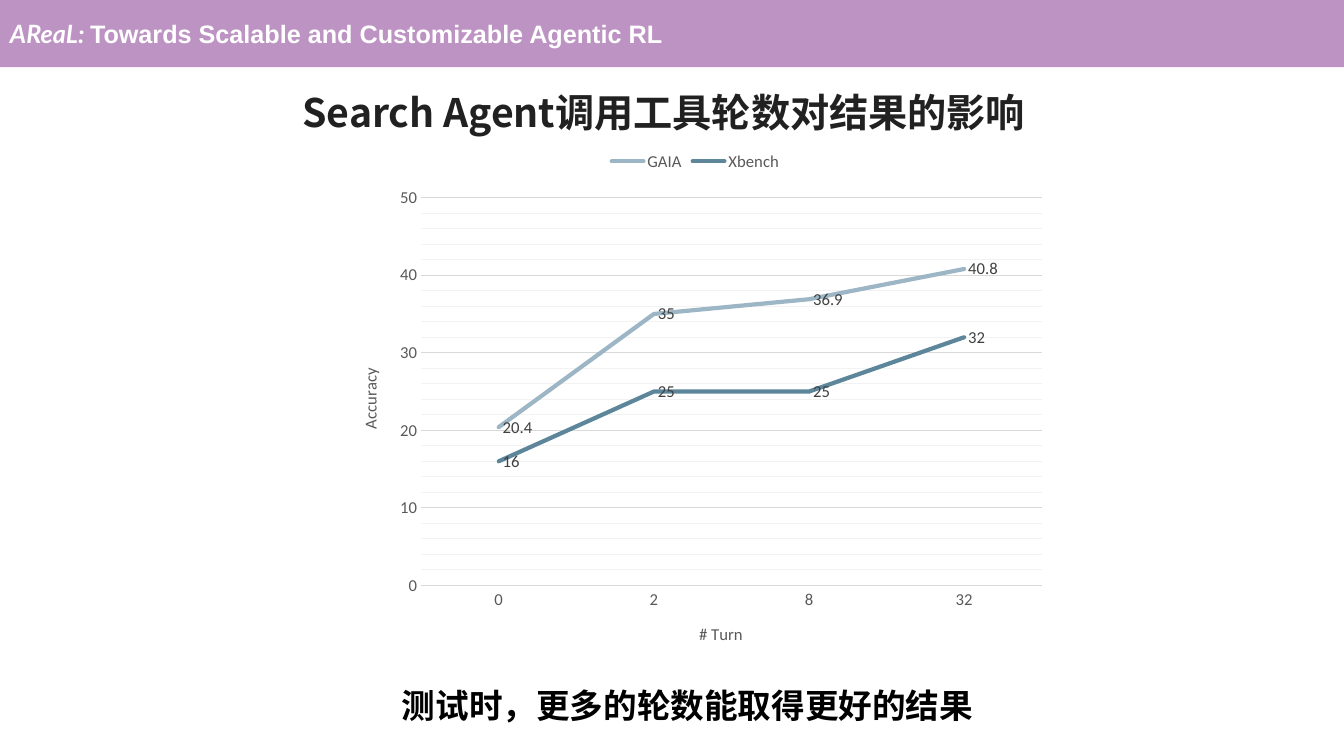
from lxml.etree import SubElement
from pptx import Presentation
from pptx.chart.data import CategoryChartData
from pptx.dml.color import RGBColor
from pptx.enum.chart import XL_CHART_TYPE, XL_LABEL_POSITION, XL_LEGEND_POSITION, XL_TICK_MARK
from pptx.enum.shapes import MSO_SHAPE
from pptx.enum.text import MSO_ANCHOR, MSO_AUTO_SIZE, PP_ALIGN
from pptx.oxml import parse_xml
from pptx.oxml.ns import nsdecls, qn
from pptx.util import Pt

CATEGORIES = ["0", "2", "8", "32"]
SERIES = [
    ("GAIA", [20.4, 35, 36.9, 40.8], "9DB6C5"),
    ("Xbench", [16, 25, 25, 32], "5D869B"),
]
PLOT_AREA = {"x": 0.12, "y": 0.11, "w": 0.86, "h": 0.74}


def color(value):
    """Turn a hex string into a colour."""
    return RGBColor.from_string(value)


def style_font(font, size, value, name="Calibri", bold=False, italic=False):
    """Set the look of a font."""
    font.size = Pt(size)
    font.color.rgb = color(value)
    font.name = name
    font.bold = bold
    font.italic = italic


def add_run(paragraph, text, size, value, name, italic=False, east_asian=None):
    """Append a bold run to a paragraph."""
    run = paragraph.add_run()
    run.text = text
    style_font(run.font, size, value, name, True, italic)
    if east_asian:
        latin = run.font._element.find(qn("a:latin"))
        latin.addnext(parse_xml(f'<a:ea {nsdecls("a")} typeface="{east_asian}"/>'))


def add_banner(slide, width):
    """Add the translucent purple bar with the project name."""
    banner = slide.shapes.add_shape(MSO_SHAPE.RECTANGLE, 0, 0, width, Pt(48))
    banner.shadow.inherit = False
    banner.line.fill.background()
    banner.fill.solid()
    banner.fill.fore_color.rgb = color("82308D")
    fill_color = banner.fill._xPr.find(".//" + qn("a:srgbClr"))
    SubElement(fill_color, qn("a:alpha"), val="52000")
    banner.text_frame.vertical_anchor = MSO_ANCHOR.MIDDLE
    paragraph = banner.text_frame.paragraphs[0]
    paragraph.alignment = PP_ALIGN.LEFT
    add_run(paragraph, "AReaL: ", 18, "FFFFFF", "Lato", italic=True)
    add_run(paragraph, "Towards Scalable and Customizable Agentic RL", 18, "FFFFFF", "Arial")


def fill_title(slide, text):
    """Place and format the slide title."""
    title = slide.shapes.title
    title.left, title.top, title.width, title.height = Pt(160.6), Pt(62.6), Pt(627), Pt(34.6)
    frame = title.text_frame
    frame.margin_left = frame.margin_right = frame.margin_top = frame.margin_bottom = Pt(1)
    frame.word_wrap = True
    frame.auto_size = MSO_AUTO_SIZE.SHAPE_TO_FIT_TEXT
    frame.vertical_anchor = MSO_ANCHOR.MIDDLE
    paragraph = frame.paragraphs[0]
    paragraph.alignment = PP_ALIGN.CENTER
    paragraph.line_spacing = 1.0
    add_run(paragraph, text, 28, "212121", "Noto Sans CJK JP", east_asian="Noto Sans CJK JP")


def add_conclusion(slide, text):
    """Add the closing statement below the chart."""
    box = slide.shapes.add_textbox(Pt(280), Pt(486), Pt(433.4), Pt(36))
    box.text_frame.word_wrap = False
    box.text_frame.auto_size = MSO_AUTO_SIZE.SHAPE_TO_FIT_TEXT
    paragraph = box.text_frame.paragraphs[0]
    add_run(paragraph, text, 24, "000000", "Calibri", east_asian="Noto Sans CJK JP")


def style_line(line, value, width):
    """Set the colour and width of a line."""
    line.color.rgb = color(value)
    line.width = Pt(width)


def style_axis(axis, title):
    """Format the labels and title of an axis."""
    axis.major_tick_mark = axis.minor_tick_mark = XL_TICK_MARK.NONE
    style_font(axis.tick_labels.font, 11.9, "595959")
    run = axis.axis_title.text_frame.paragraphs[0].add_run()
    run.text = title
    style_font(run.font, 11.9, "595959")


def add_minor_gridlines(axis, value, width):
    """Show the minor gridlines of an axis in a given colour and width."""
    axis.has_minor_gridlines = True
    gridlines = axis._element.find(qn("c:minorGridlines"))
    gridlines.append(parse_xml(
        f'<c:spPr {nsdecls("c", "a")}><a:ln w="{Pt(width)}"><a:solidFill>'
        f'<a:srgbClr val="{value}"/></a:solidFill></a:ln></c:spPr>'))


def style_series(series, value):
    """Format a series line and its value labels."""
    series.smooth = False
    style_line(series.format.line, value, 3)
    series.format.line._get_or_add_ln().set("cap", "rnd")
    labels = series.data_labels
    labels.show_value = True
    labels.position = XL_LABEL_POSITION.RIGHT
    style_font(labels.font, 11.9, "404040")


def set_plot_area(chart):
    """Fix the inner plot area as fractions of the chart."""
    plot_area = chart._chartSpace.chart.plotArea
    for layout in plot_area.findall(qn("c:layout")):
        plot_area.remove(layout)
    modes = "".join(f'<c:{side}Mode val="edge"/>' for side in "xy")
    sizes = "".join(f'<c:{key} val="{value}"/>' for key, value in PLOT_AREA.items())
    plot_area.insert(0, parse_xml(
        f'<c:layout {nsdecls("c")}><c:manualLayout><c:layoutTarget val="inner"/>'
        f"{modes}{sizes}</c:manualLayout></c:layout>"))


def add_accuracy_chart(slide):
    """Add the line chart of accuracy by number of turns."""
    data = CategoryChartData()
    data.categories = CATEGORIES
    for name, values, _ in SERIES:
        data.add_series(name, values)
    chart = slide.shapes.add_chart(
        XL_CHART_TYPE.LINE, Pt(239), Pt(100), Pt(515.5), Pt(374.4), data).chart
    style_font(chart.font, 10, "000000")
    chart.has_title = False
    chart.has_legend = True
    chart.legend.position = XL_LEGEND_POSITION.TOP
    chart.legend.include_in_layout = False
    style_font(chart.legend.font, 11.9, "595959")
    chart.plots[0].vary_by_categories = False

    style_axis(chart.category_axis, "# Turn")
    style_line(chart.category_axis.format.line, "D9D9D9", 0.75)
    value_axis = chart.value_axis
    style_axis(value_axis, "Accuracy")
    value_axis.format.line.fill.background()
    value_axis.minimum_scale, value_axis.maximum_scale = 0, 50
    value_axis.major_unit, value_axis.minor_unit = 10, 2
    style_line(value_axis.major_gridlines.format.line, "D9D9D9", 0.75)
    add_minor_gridlines(value_axis, "F2F2F2", 0.75)

    for series, (_, _, value) in zip(chart.plots[0].series, SERIES):
        style_series(series, value)
    set_plot_area(chart)


def main():
    """Build the slide and save it."""
    presentation = Presentation()
    presentation.slide_width, presentation.slide_height = Pt(960), Pt(540)
    slide = presentation.slides.add_slide(presentation.slide_layouts[5])
    add_banner(slide, presentation.slide_width)
    add_conclusion(slide, "测试时，更多的轮数能取得更好的结果")
    fill_title(slide, "Search Agent调用工具轮数对结果的影响")
    add_accuracy_chart(slide)
    presentation.save("out.pptx")


if __name__ == "__main__":
    main()
